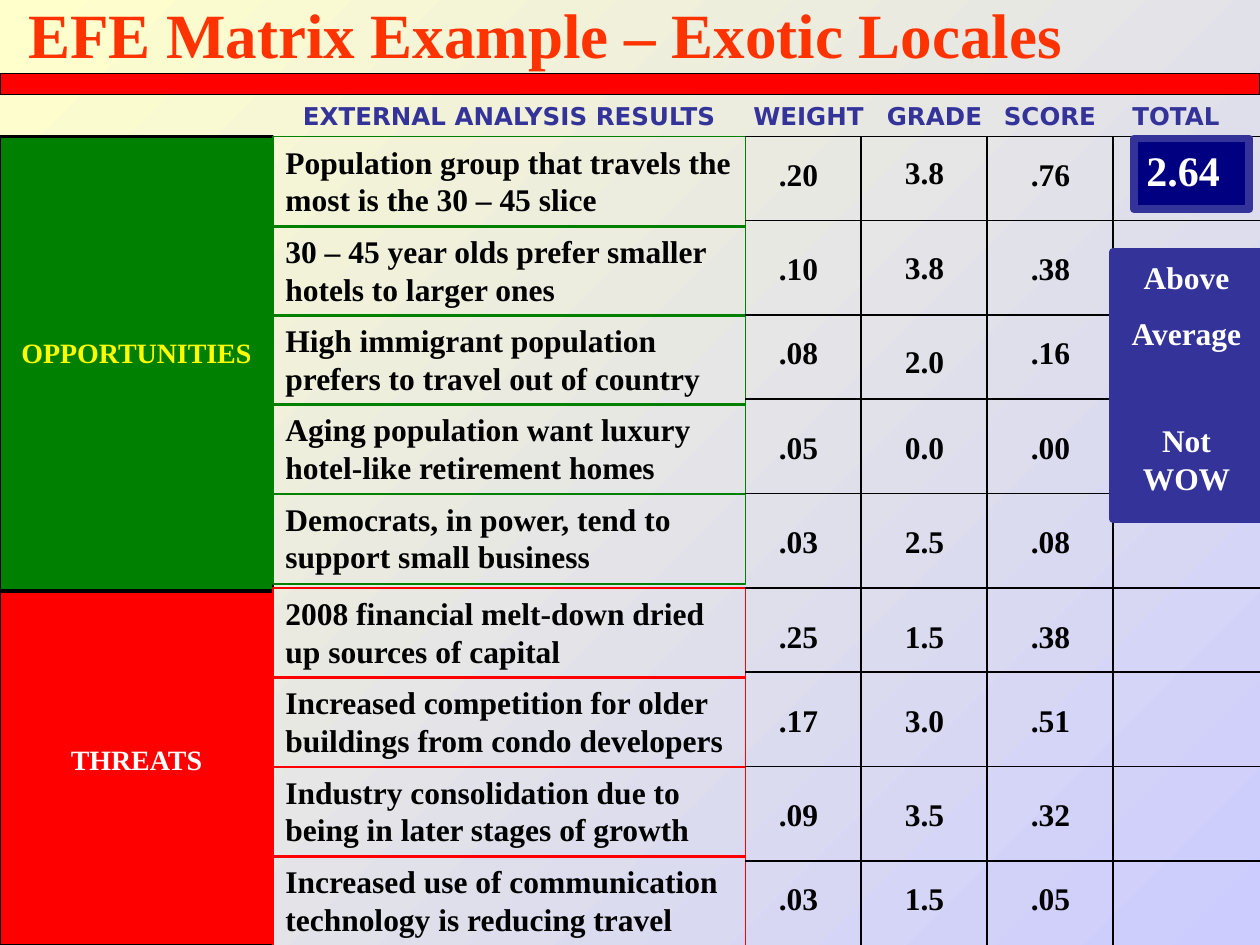
import lxml.etree
import pptx
import pptx.dml.color
import pptx.enum.shapes
import pptx.enum.text
import pptx.oxml.ns
import pptx.util

Pt = pptx.util.Pt
ALIGN = pptx.enum.text.PP_ALIGN
ANCHOR = pptx.enum.text.MSO_ANCHOR


class Theme:
    SERIF = "Times New Roman"
    SANS = "DejaVu Sans"
    TITLE_SIZE, TOTAL_SIZE, BODY_SIZE, CATEGORY_SIZE, HEADER_SIZE = 36, 24, 18, 16, 14
    BLACK, WHITE, YELLOW = "000000", "FFFFFF", "FFFF00"
    RED, GREEN, ORANGE = "FF0000", "008000", "FF3300"
    INDIGO, NAVY = "333399", "000080"
    BACKGROUND = ("FFFFCC", "CCCCFF")


def rgb(value):
    return pptx.dml.color.RGBColor.from_string(value)


class SlideBuilder:
    def __init__(self, slide, theme):
        self.slide = slide
        self.theme = theme

    def background(self):
        fill = self.slide.background.fill
        fill.gradient()
        fill.gradient_angle = 315
        for stop, color in zip(fill.gradient_stops, self.theme.BACKGROUND):
            stop.color.rgb = rgb(color)

    def set_text(self, shape, text, size, color, font=None, align=ALIGN.LEFT,
                 anchor=ANCHOR.TOP, left=7.2, top=3.6):
        frame = shape.text_frame
        frame.text = text
        frame.word_wrap = True
        frame.auto_size = pptx.enum.text.MSO_AUTO_SIZE.NONE
        frame.vertical_anchor = anchor
        frame.margin_left, frame.margin_top = Pt(left), Pt(top)
        frame.margin_right, frame.margin_bottom = Pt(7.2), Pt(3.6)
        for paragraph in frame.paragraphs:
            paragraph.alignment = align
            for run in paragraph.runs:
                run.font.size = Pt(size)
                run.font.name = font or self.theme.SERIF
                run.font.bold = True
                run.font.color.rgb = rgb(color)

    def title(self, text):
        shape = self.slide.shapes.title
        shape.left, shape.top, shape.width, shape.height = Pt(0), Pt(0), Pt(708), Pt(38)
        self.set_text(shape, text, self.theme.TITLE_SIZE, self.theme.ORANGE,
                      anchor=ANCHOR.MIDDLE, left=16.2)

    def box(self, left, top, width, height, fill, line, weight):
        shape = self.slide.shapes.add_shape(
            pptx.enum.shapes.MSO_SHAPE.RECTANGLE, Pt(left), Pt(top), Pt(width), Pt(height))
        shape.shadow.inherit = False
        if fill:
            shape.fill.solid()
            shape.fill.fore_color.rgb = rgb(fill)
        else:
            shape.fill.background()
        shape.line.color.rgb = rgb(line)
        shape.line.width = Pt(weight)
        return shape

    def label(self, left, top, width, height, text, size, color, **style):
        shape = self.slide.shapes.add_textbox(Pt(left), Pt(top), Pt(width), Pt(height))
        self.set_text(shape, text, size, color, **style)

    def rule(self, x1, y1, x2, y2):
        line = self.slide.shapes.add_connector(
            pptx.enum.shapes.MSO_CONNECTOR.STRAIGHT, Pt(x1), Pt(y1), Pt(x2), Pt(y2))
        line.line.color.rgb = rgb(self.theme.BLACK)
        line.line.width = Pt(0.75)
        lxml.etree.SubElement(line._element.spPr, pptx.oxml.ns.qn("a:effectLst"))


# Category, fill, text colour, top, height, text offset, first factor top, factors
CATEGORIES = [
    ("OPPORTUNITIES", Theme.GREEN, Theme.YELLOW, 78, 259.2, 113.6, 78, [
        "Population group that travels the most is the 30 – 45 slice",
        "30 – 45 year olds prefer smaller hotels to larger ones",
        "High immigrant population prefers to travel out of country",
        "Aging population want luxury hotel-like retirement homes",
        "Democrats, in power, tend to support small business"]),
    ("THREATS", Theme.RED, Theme.WHITE, 338.4, 201.6, 86.1, 336, [
        "2008 financial melt-down dried up sources of capital",
        "Increased competition for older buildings from condo developers",
        "Industry consolidation due to being in later stages of growth",
        "Increased use of communication technology is reducing travel"]),
]
# Heading, heading left, heading width
HEADERS = [("EXTERNAL ANALYSIS RESULTS", 156, 270), ("WEIGHT", 420, 84),
           ("GRADE", 492, 84), ("SCORE", 558, 84), ("TOTAL", 630, 84)]
# Left edge and values of each numeric column
COLUMNS = [
    (438, [".20", ".10", ".08", ".05", ".03", ".25", ".17", ".09", ".03"]),
    (510, ["3.8", "3.8", "2.0", "0.0", "2.5", "1.5", "3.0", "3.5", "1.5"]),
    (582, [".76", ".38", ".16", ".00", ".08", ".38", ".51", ".32", ".05"]),
]
VALUE_TOPS = [85, 139, 187, 241, 295, 349, 397, 451, 499]
VALUE_SHIFTS = {"2.0": 5, "3.8": -1}
ROW_LINES = [78, 126, 180, 228, 282, 336, 384, 438, 492]
COLUMN_LINES = [492, 564, 636]
TABLE_LEFT, TABLE_TOP, SLIDE_WIDTH, SLIDE_HEIGHT = 426, 78, 720, 540
FACTOR_PITCH = 51


def main():
    presentation = pptx.Presentation()
    presentation.slide_width, presentation.slide_height = Pt(SLIDE_WIDTH), Pt(SLIDE_HEIGHT)
    theme = Theme()
    builder = SlideBuilder(presentation.slides.add_slide(presentation.slide_layouts[5]), theme)

    # Background, title and bar
    builder.background()
    builder.title("EFE Matrix Example – Exotic Locales")
    builder.box(0, 42, SLIDE_WIDTH, 12, theme.RED, theme.BLACK, 0.75)

    # Categories with their factors
    for name, fill, color, top, height, offset, first_top, factors in CATEGORIES:
        category = builder.box(0, top, 156, height, fill, theme.BLACK, 1.5)
        builder.set_text(category, name, theme.CATEGORY_SIZE, color,
                         align=ALIGN.CENTER, top=offset)
        for index, text in enumerate(factors):
            factor = builder.box(156, first_top + index * FACTOR_PITCH, 270, 51.6,
                                 None, fill, 1)
            builder.set_text(factor, text, theme.BODY_SIZE, theme.BLACK)

    # Column headings
    for text, left, width in HEADERS:
        builder.label(left, 54, width, 24, text, theme.HEADER_SIZE, theme.INDIGO,
                      font=theme.SANS, align=ALIGN.CENTER)

    # Grid lines
    for y in ROW_LINES:
        builder.rule(TABLE_LEFT, y, SLIDE_WIDTH, y)
    for x in COLUMN_LINES:
        builder.rule(x, TABLE_TOP, x, SLIDE_HEIGHT)

    # Weights, grades and scores
    for left, values in COLUMNS:
        for top, value in zip(VALUE_TOPS, values):
            builder.label(left, top + VALUE_SHIFTS.get(value, 0), 42, 28.8, value,
                          theme.BODY_SIZE, theme.BLACK)

    # Total and verdict
    total = builder.box(648, 79.2, 66, 40.3, theme.NAVY, theme.INDIGO, 4.5)
    builder.set_text(total, "2.64", theme.TOTAL_SIZE, theme.WHITE)
    verdict = builder.box(636, 144, 84, 152.6, theme.INDIGO, theme.INDIGO, 4.5)
    builder.set_text(verdict, "Above\nAverage\nNot WOW", theme.BODY_SIZE, theme.WHITE,
                     align=ALIGN.CENTER)
    for paragraph, space in zip(verdict.text_frame.paragraphs[1:], (10, 40)):
        paragraph.space_before = Pt(space)

    presentation.save("out.pptx")


if __name__ == "__main__":
    main()
